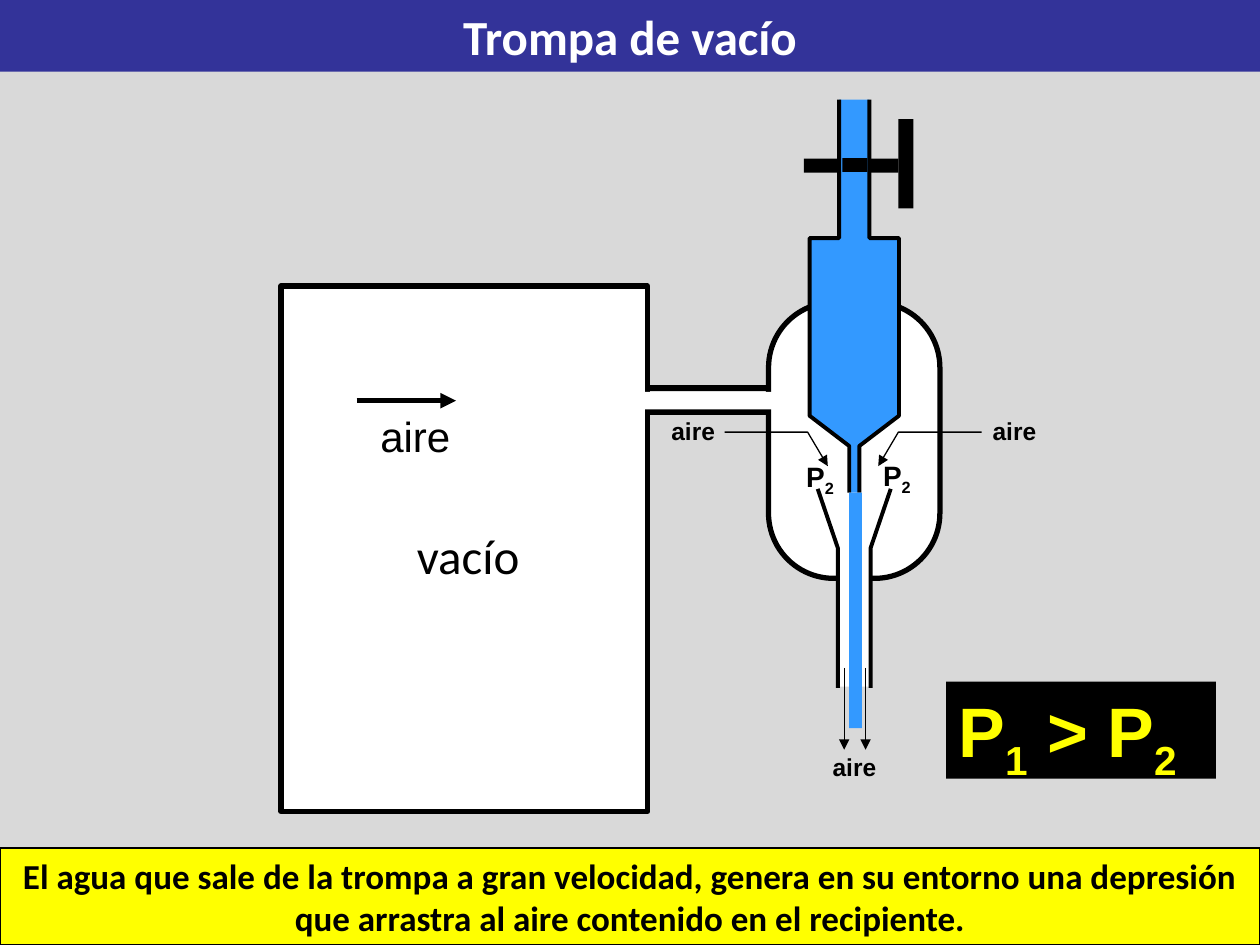
"""Build the slide "Trompa de vacío" on a grid of 100 columns by 75 rows."""
from lxml import etree
from pptx import Presentation
from pptx import util as u
from pptx.dml.color import RGBColor
from pptx.enum import shapes, text
from pptx.oxml.ns import qn

COLORS = {"ground": "D9D9D9", "band": "333399", "water": "3399FF",
          "ink": "000000", "paper": "FFFFFF", "signal": "FFFF00"}
CELL = u.Inches(10) // 100
AXIS, AIR_AXIS = 67.8, 67.7
RECT, ROUND = shapes.MSO_SHAPE.RECTANGLE, shapes.MSO_SHAPE.ROUNDED_RECTANGLE

VESSEL = (22.3, 22.7, 29.1, 41.7)
CHAMBER = (61, 24, 13.6, 21.9)
SUCTION_PIPE = [((61, row), (51.5, row)) for row in (30.8, 32.7)]
PIPE_INSIDE = (50.8, 31.1, 10.7, 1.4)
VALVE = [(71.3, 9.45, 1.2, 7.1), (63.8, 12.6, 7.5, 1.1)]
VALVE_CORE = (66.85, 12.55, 2, 1.1)
NOZZLE_HALF = [(1.2, 7.9), (1.2, 18.9), (3.55, 18.9), (3.55, 33), (0.4, 35.4), (0.4, 39.3)]
NOZZLE_MOUTH = (66.9, 39.1, 1.7, 1)
OUTLET = (66.6, 45.3, 2.5, 9.2)
GUIDE_HALF = [(2.9, 38.8), (1.3, 43.5), (1.3, 54.6)]
JET = (67.4, 39.1, 1, 18.7)
AIR_HALF = [(2, 37), (3.6, 34.3), (10.2, 34.3)]
AIR_OUT = [((col, 53), (col, 59.5)) for col in (67, 68.7)]
AIR_IN = ((28.3, 31.8), (36.2, 31.8))

LABELS = [
    ((29.2, 32.1, 7.6, 5), ["aire"], 24, "Arial", False),
    ((63, 36, 8.3, 3.7), ["P", "2"], 16, "Arial", True),
    ((69.1, 35.9, 6.5, 3.7), ["P", "2"], 16, "Arial", True),
    ((77.8, 32.5, 7.6, 3.3), ["aire"], 14, "Arial", True),
    ((52.3, 32.5, 7.6, 3.3), ["aire"], 14, "Arial", True),
    ((65.1, 59.2, 7.6, 3.3), ["aire"], 14, "Arial", True),
    ((32.1, 41.2, 11.1, 5.7), ["vacío"], 28, "Calibri", False),
]
BANNERS = [
    ((0, 0, 100, 5.7), ["Trompa de vacío"], 28, "Calibri", "paper", "band", 0, "CENTER"),
    ((0, 67.3, 100, 7.7),
     ["El agua que sale de la trompa a gran velocidad, genera en su entorno una depresión "
      "que arrastra al aire contenido en el recipiente."],
     20, "Calibri", "ink", "signal", 0.75, "CENTER"),
    ((75.1, 54.1, 21.4, 7.7), ["P", "1", " > P", "2"], 40, "Arial", "signal", "ink", 0, "LEFT"),
]


def cells(values):
    return [round(value * CELL) for value in values]


def rgb(name):
    return RGBColor.from_string(COLORS[name])


def paint(part, fill=None, width=0):
    part.shadow.inherit = False
    if fill:
        part.fill.solid()
        part.fill.fore_color.rgb = rgb(fill)
    else:
        part.fill.background()
    if width:
        part.line.color.rgb = rgb("ink")
        part.line.width = u.Pt(width)
    else:
        part.line.fill.background()
    return part


def block(slide, box, fill, width=0, preset=RECT):
    return paint(slide.shapes.add_shape(preset, *cells(box)), fill, width)


def outline(slide, points, fill=None, width=2.25):
    start, *rest = [cells(point) for point in points]
    builder = slide.shapes.build_freeform(*start)
    builder.add_line_segments(rest, close=False)
    return paint(builder.convert_to_shape(), fill, width)


def mirrored(half, axis, side):
    return [(axis + side * offset, row) for offset, row in half]


def arrowhead(part, end):
    etree.SubElement(part.line._get_or_add_ln(), qn(f"a:{end}"), type="triangle")


def stroke(slide, ends, width, arrow=False):
    start, finish = ends
    line = slide.shapes.add_connector(shapes.MSO_CONNECTOR.STRAIGHT, *cells(start + finish))
    line.line.color.rgb = rgb("ink")
    line.line.width = u.Pt(width)
    if arrow:
        arrowhead(line, "tailEnd")
    etree.SubElement(line._element.spPr, qn("a:effectLst"))


def write(part, pieces, size, face, bold, color="ink", align="LEFT"):
    frame = part.text_frame
    frame.word_wrap = True
    frame.vertical_anchor = text.MSO_ANCHOR.TOP
    paragraph = frame.paragraphs[0]
    paragraph.alignment = text.PP_ALIGN[align]
    for piece in pieces:
        run = paragraph.add_run()
        run.text = piece
        run.font.size, run.font.name, run.font.bold = u.Pt(size), face, bold
        run.font.color.rgb = rgb(color)
        if piece.isdigit():
            run.font._element.set("baseline", "-25000")


def draw_pump(slide):
    block(slide, VESSEL, "paper", 3)
    for wall in SUCTION_PIPE:
        stroke(slide, wall, 3)
    block(slide, CHAMBER, "paper", 3, ROUND).adjustments[0] = 0.38
    for bar in VALVE:
        block(slide, bar, "ink")
    left, right = (mirrored(NOZZLE_HALF, AXIS, side) for side in (-1, 1))
    outline(slide, left + right[::-1], "water")
    block(slide, NOZZLE_MOUTH, "paper")
    block(slide, OUTLET, "paper")
    for side in (-1, 1):
        outline(slide, mirrored(GUIDE_HALF, AXIS, side))
    block(slide, JET, "water")
    block(slide, VALVE_CORE, "ink")


def draw_air(slide):
    for side in (1, -1):
        arrowhead(outline(slide, mirrored(AIR_HALF, AIR_AXIS, side), width=0.75), "headEnd")
    for ends in AIR_OUT:
        stroke(slide, ends, 0.75, True)
    block(slide, PIPE_INSIDE, "paper")
    stroke(slide, AIR_IN, 3, True)


def main():
    deck = Presentation()
    deck.slide_width, deck.slide_height = cells((100, 75))
    slide = deck.slides.add_slide(deck.slide_layouts[6])
    slide.background.fill.solid()
    slide.background.fill.fore_color.rgb = rgb("ground")
    draw_pump(slide)
    draw_air(slide)
    for box, pieces, size, face, bold in LABELS:
        write(slide.shapes.add_textbox(*cells(box)), pieces, size, face, bold)
    for box, pieces, size, face, color, fill, width, align in BANNERS:
        write(block(slide, box, fill, width), pieces, size, face, True, color, align)
    deck.save("out.pptx")


if __name__ == "__main__":
    main()
